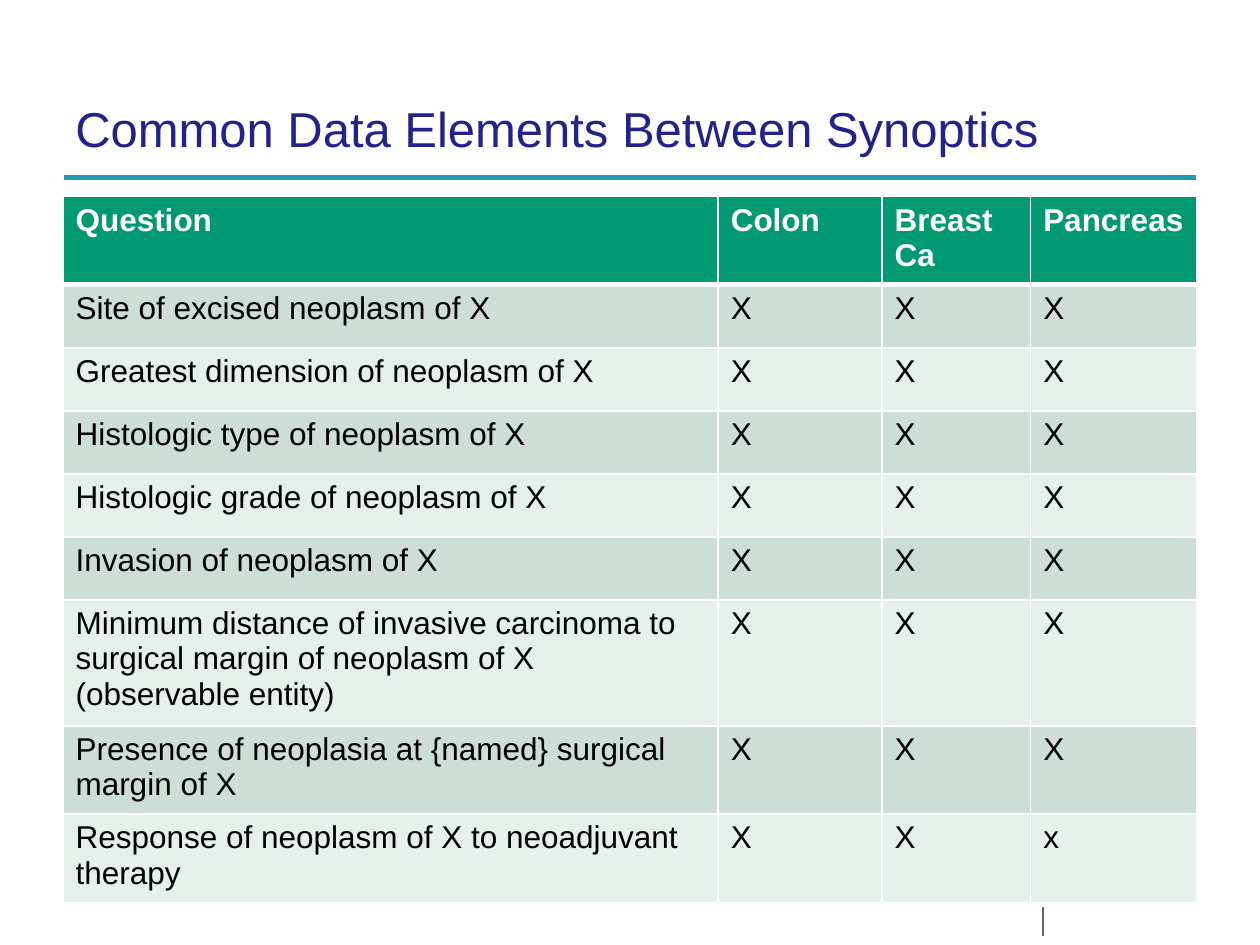
from lxml.etree import SubElement
from pptx import Presentation
from pptx.dml.color import RGBColor
from pptx.enum.shapes import MSO_CONNECTOR
from pptx.enum.text import MSO_ANCHOR
from pptx.oxml.ns import qn
from pptx.util import Inches, Pt

WIDE, HIGH = Inches(10), Inches(7.5)
LEFT = 0.05  # side margin as a share of the width
FONT = "Arial"
WHITE = RGBColor(0xFF, 0xFF, 0xFF)
BLACK = RGBColor(0, 0, 0)
NAVY = RGBColor(0x22, 0x22, 0x8B)
TEAL = RGBColor(0x22, 0x9B, 0xB8)
GRAY = RGBColor(0x66, 0x66, 0x66)
GREEN = RGBColor(0x00, 0x99, 0x72)
BANDS = RGBColor(0xCC, 0xDE, 0xD5), RGBColor(0xE7, 0xEF, 0xEB)

TITLE = "Common Data Elements Between Synoptics"
HEAD = ["Question", "Colon", "Breast Ca", "Pancreas"]
ITEMS = [
    "Site of excised neoplasm of X",
    "Greatest dimension of neoplasm of X",
    "Histologic type of neoplasm of X",
    "Histologic grade of neoplasm of X",
    "Invasion of neoplasm of X",
    "Minimum distance of invasive carcinoma to surgical margin of neoplasm of X "
    "(observable entity)",
    "Presence of neoplasia at {named} surgical margin of X",
    "Response of neoplasm of X to neoadjuvant therapy",
]
COLS = [5.2, 1.3, 1.18, 1.32]
ROW = 0.5


def across(share):
    return int(WIDE * share)


def down(share):
    return int(HIGH * share)


def add_text(frame, text, size, color, bold=False):
    run = frame.paragraphs[0].add_run()
    run.text = text
    font = run.font
    font.name, font.size, font.bold = FONT, Pt(size), bold
    font.color.rgb = color


def add_title(slide):
    box = slide.shapes.add_textbox(across(LEFT), down(0.093), across(0.9), down(0.084))
    frame = box.text_frame
    frame.word_wrap = True
    frame.vertical_anchor = MSO_ANCHOR.MIDDLE
    add_text(frame, TITLE, 28, NAVY)


def add_rule(slide, start, end, color, width):
    """Draw a line between two points given as shares of the slide."""
    line = slide.shapes.add_connector(
        MSO_CONNECTOR.STRAIGHT,
        across(start[0]), down(start[1]), across(end[0]), down(end[1]))
    line.line.color.rgb = color
    line.line.width = Pt(width)
    SubElement(line._element.spPr, qn("a:effectLst"))


def add_edges(cell, top, bottom):
    """Give a cell white borders; top and bottom are widths in points."""
    props = cell._tc.get_or_add_tcPr()
    for side, width in zip("LRTB", (1, 1, top, bottom)):
        edge = SubElement(props, qn(f"a:ln{side}"), w=str(Pt(width)))
        fill = SubElement(edge, qn("a:solidFill"))
        SubElement(fill, qn("a:srgbClr"), val=str(WHITE))


def add_grid(slide):
    rows = [HEAD] + [[item, "X", "X", "X"] for item in ITEMS]
    rows[-1][-1] = "x"
    table = slide.shapes.add_table(
        len(rows), len(COLS), across(LEFT), down(0.208),
        Inches(sum(COLS)), Inches(ROW * len(rows))).table
    for col, width in zip(table.columns, COLS):
        col.width = Inches(width)
    for r, texts in enumerate(rows):
        head = r == 0
        for c, text in enumerate(texts):
            cell = table.cell(r, c)
            add_edges(cell, 3 if r == 1 else 1, 3 if head else 1)
            cell.fill.solid()
            cell.fill.fore_color.rgb = GREEN if head else BANDS[(r - 1) % 2]
            add_text(cell.text_frame, text, 18, WHITE if head else BLACK, head)


def main():
    deck = Presentation()
    deck.slide_width, deck.slide_height = WIDE, HIGH
    slide = deck.slides.add_slide(deck.slide_layouts[6])
    add_rule(slide, (0.828, 0.96), (0.828, 0.99), GRAY, 1)
    add_rule(slide, (0.051, 0.188), (0.949, 0.188), TEAL, 3)
    add_title(slide)
    add_grid(slide)
    deck.save("out.pptx")


if __name__ == "__main__":
    main()
